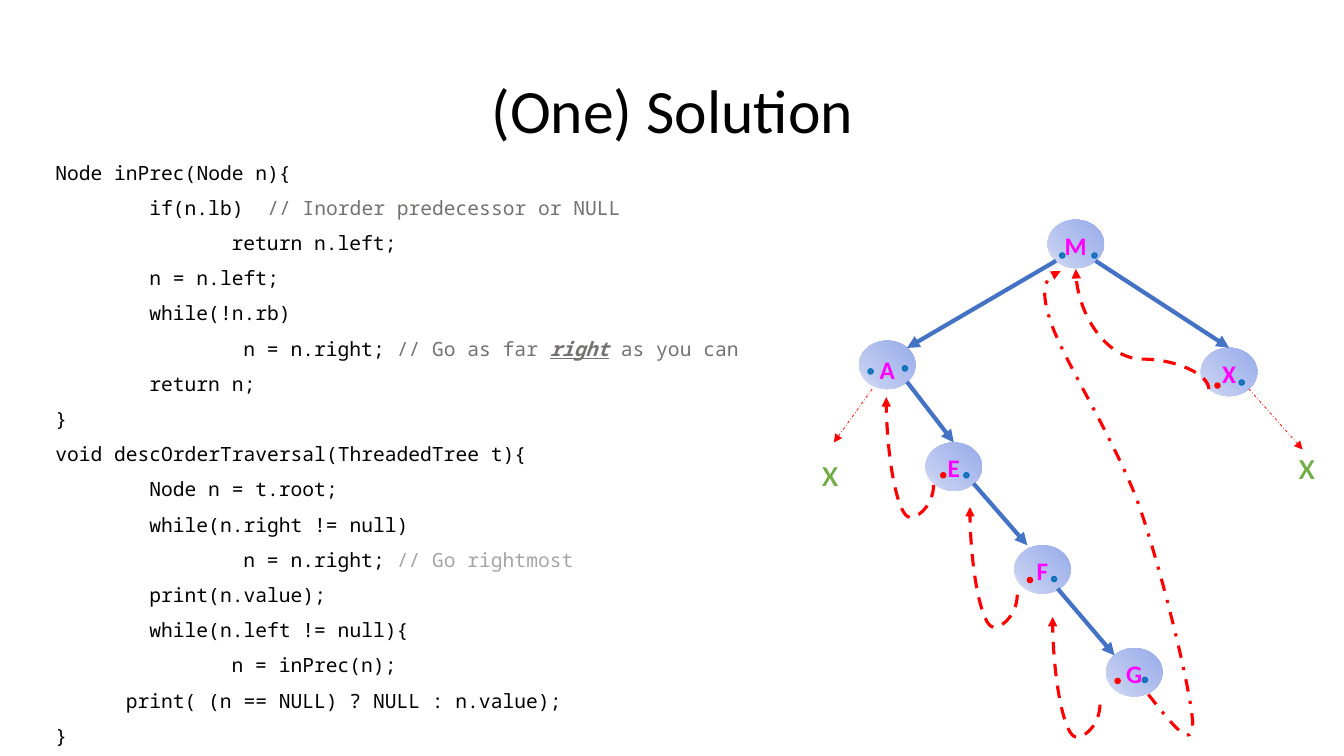
import lxml.etree
import pptx
import pptx.dml.color
import pptx.enum.dml
import pptx.enum.shapes
import pptx.enum.text
import pptx.oxml
import pptx.oxml.ns
import pptx.util

WIDE, TALL = 133.3, 75
SANS, MONO = "Calibri", "Noto Sans Mono"
HUES = {
    "ink": "000000", "note": "767171", "pale": "A6A6A6", "name": "FF00FF",
    "null": "70AD47", "link": "4472C4", "thread": "FF0000",
    "dot": "2E75B6", "rim": "0070C0",
}
SHADES = [(0, "96ABEA"), (74, "C0CBF0"), (100, "E0E5F7")]
DASH = pptx.enum.dml.MSO_LINE.DASH
DOTTED = pptx.enum.dml.MSO_LINE.DASH_DOT
MID = pptx.enum.text.PP_ALIGN.CENTER
LEFT = pptx.enum.text.PP_ALIGN.LEFT

CODE = [
    (0, ["Node inPrec(Node n){"]),
    (8, ["if(n.lb)  ", ("// Inorder predecessor or NULL", "note")]),
    (15, ["return n.left;"]),
    (8, ["n = n.left;"]),
    (8, ["while(!n.rb)"]),
    (16, ["n = n.right; ", ("// Go as far ", "note"),
          ("right", "note", True), (" as you can", "note")]),
    (8, ["return n;"]),
    (0, ["}"]),
    (0, ["void descOrderTraversal(ThreadedTree t){"]),
    (8, ["Node n = t.root;"]),
    (8, ["while(n.right != null)"]),
    (16, ["n = n.right; ", ("// Go rightmost", "pale")]),
    (8, ["print(n.value);"]),
    (8, ["while(n.left != null){"]),
    (15, ["n = inPrec(n);"]),
    (6, ["print( (n == NULL) ? NULL : n.value);"]),
    (0, ["}"]),
]
NODE_W, NODE_H = 5.6, 4.8
NODES = {
    "M": (106.7, 24.2, "dot", (-1.35, 1.15), (1.85, 1.15)),
    "A": (88, 36.2, "dot", (-1.65, 0.65), (1.75, 0.35)),
    "X": (121.9, 36.9, "thread", (-1.15, 1.35), (1.25, 1.05)),
    "E": (94.6, 46.3, "thread", (-1.05, 0.85), (1.25, 0.85)),
    "F": (103.4, 56.5, "thread", (-1.25, 1.05), (1.15, 0.95)),
    "G": (112.5, 66.7, "thread", (-1.65, 0.85), (1.05, 0.75)),
}
SWEEP = [
    (113.9, 68.9), (116.2, 71.8), (118.4, 74.7), (118.3, 71.6),
    (118.1, 68.4), (115.3, 56.9), (113, 50.2), (110.6, 43.6),
    (105.5, 35.8), (104.2, 31.9), (102.9, 28), (104, 27.4), (105.2, 26.9),
]


def grid(*cells):
    return [pptx.util.Inches(cell / 10) for cell in cells]


def tint(hue):
    return pptx.dml.color.RGBColor.from_string(HUES[hue])


def write(shape, lines, size=18, font=SANS, hue="ink", bold=False, align=MID,
          mid=True, wrap=True, inset=(1, 0.5, 1, 0.5), space=1, before=0):
    frame = shape.text_frame
    frame.word_wrap = wrap
    anchor = pptx.enum.text.MSO_ANCHOR
    frame.vertical_anchor = anchor.MIDDLE if mid else anchor.TOP
    (frame.margin_left, frame.margin_top,
     frame.margin_right, frame.margin_bottom) = grid(*inset)
    for row, (indent, parts) in enumerate(lines):
        para = frame.add_paragraph() if row else frame.paragraphs[0]
        para.alignment, para.line_spacing = align, space
        para.space_before = pptx.util.Pt(before)
        if indent:
            step = pptx.util.Pt(indent * size * 0.6)
            para._p.get_or_add_pPr().set("marL", str(step))
        for part in parts:
            words, shade, stress = part, hue, False
            if isinstance(part, tuple):
                words, shade, stress = (part + (False,))[:3]
            run = para.add_run()
            run.text = words
            face = run.font
            face.name, face.size = font, pptx.util.Pt(size)
            face.bold, face.italic, face.underline = bold or stress, stress, stress
            face.color.rgb = tint(shade)


def box(slide, place, lines, **style):
    write(slide.shapes.add_textbox(*grid(*place)), lines, **style)


def oval(slide, x, y, w, h):
    kind = pptx.enum.shapes.MSO_SHAPE.OVAL
    shape = slide.shapes.add_shape(kind, *grid(x - w / 2, y - h / 2, w, h))
    shape.shadow.inherit = False
    return shape


def node(slide, name):
    x, y = NODES[name][:2]
    shape = oval(slide, x, y, NODE_W, NODE_H)
    stops = "".join(f'<a:gs pos="{pos * 1000}"><a:srgbClr val="{hue}"/></a:gs>'
                    for pos, hue in SHADES)
    shape.element.spPr.insert(2, pptx.oxml.parse_xml(
        f'<a:gradFill {pptx.oxml.ns.nsdecls("a")}><a:gsLst>{stops}</a:gsLst>'
        '<a:path path="circle"><a:fillToRect l="100000" b="100000"/></a:path>'
        '</a:gradFill>'))
    shape.line.fill.background()
    drop = 1 if name == "A" else 0.2
    write(shape, [(0, [name])], hue="name", bold=True, wrap=False,
          inset=(0, drop, 0, 0))
    return shape


def dot(slide, x, y, hue):
    shape = oval(slide, x, y, 0.5, 0.5)
    shape.fill.solid()
    shape.fill.fore_color.rgb = tint(hue)
    shape.line.color.rgb = tint("rim" if hue == "dot" else hue)
    shape.line.width = pptx.util.Pt(1)


def under(parent, tag, **values):
    return lxml.etree.SubElement(parent, pptx.oxml.ns.qn(tag), **values)


def pen(shape, hue, width, dash=None):
    shape.line.color.rgb = tint(hue)
    shape.line.width = pptx.util.Pt(width)
    if dash:
        shape.line.dash_style = dash
    props = shape.element.spPr
    under(props.find(pptx.oxml.ns.qn("a:ln")), "a:tailEnd", type="triangle")
    under(props, "a:effectLst")


def arrow(slide, start, end, hue="link", width=3, dash=None):
    kind = pptx.enum.shapes.MSO_CONNECTOR.STRAIGHT
    line = slide.shapes.add_connector(kind, *grid(*start, *end))
    pen(line, hue, width, dash)
    return line


def thread(slide, start, end, bend):
    (x, y), (far, top) = start, end
    mx, my = (x + far) / 2, (y + top) / 2
    long, high = (y - top) / 2, (x - far) / 2
    kind = pptx.enum.shapes.MSO_CONNECTOR.CURVE
    line = slide.shapes.add_connector(
        kind, *grid(mx + long, my - high, mx - long, my + high))
    props = line.element.spPr
    props.find(pptx.oxml.ns.qn("a:xfrm")).set("rot", "5400000")
    shape = props.find(pptx.oxml.ns.qn("a:prstGeom"))
    guides = shape.find(pptx.oxml.ns.qn("a:avLst"))
    if guides is None:
        guides = under(shape, "a:avLst")
    under(guides, "a:gd", name="adj1", fmla=f"val {round(bend * 100000)}")
    pen(line, "thread", 2.25, DASH)


def curve(points, steps=12):
    for i in range(0, len(points) - 1, 3):
        for step in range(1, steps + 1):
            t = step / steps
            parts = ((1 - t) ** 3, 3 * t * (1 - t) ** 2, 3 * t * t * (1 - t), t ** 3)
            yield grid(*(sum(part * point[axis] for part, point
                             in zip(parts, points[i:i + 4])) for axis in (0, 1)))


def sweep(slide):
    form = slide.shapes.build_freeform(*grid(*SWEEP[0]))
    form.add_line_segments(list(curve(SWEEP)), close=False)
    shape = form.convert_to_shape()
    shape.fill.background()
    pen(shape, "thread", 2.25, DOTTED)


def edge(name, side, level):
    x, y = NODES[name][:2]
    return x + side * NODE_W * 0.35, y + level * NODE_H * 0.35


def main():
    deck = pptx.Presentation()
    deck.slide_width, deck.slide_height = grid(WIDE, TALL)
    slide = deck.slides.add_slide(deck.slide_layouts[6])

    box(slide, (9.2, 4, 115, 14.5), [(0, ["(One) Solution"])], size=44, space=0.9)
    box(slide, (4.5, 15.7, 124.7, 58.1), CODE, size=14, font=MONO,
        align=LEFT, mid=False, space=0.9, before=10)

    nodes = {name: node(slide, name) for name in NODES}
    arrow(slide, edge("M", -1, 1), edge("A", 1, -1))
    for start, name in ((edge("M", 1, 1), "X"), (edge("A", 1, 1), "E")):
        arrow(slide, start, NODES[name][:2]).end_connect(nodes[name], 0)
    arrow(slide, edge("E", 1, 1), (101.9, 54.1))
    arrow(slide, (104.9, 58.4), edge("G", -1, -1))

    for x, y in ((92.6, 48.1), (100.9, 59), (109.1, 69.9)):
        thread(slide, (x, y), (x - 4.7, y - 8.7), -0.37)
    thread(slide, (119.9, 38.6), (106.7, 26.7), 0.25)
    sweep(slide)

    for x, y in ((80.5, 43.9), (127.8, 43.2)):
        box(slide, (x, y, 4.3, 5.7), [(0, ["x"])], size=28, hue="null",
            align=LEFT, mid=False)
    for x, y, hue, left, right in NODES.values():
        dot(slide, x + left[0], y + left[1], hue)
        dot(slide, x + right[0], y + right[1], "dot")
    for start, end in ((edge("X", 1, 1), (129.2, 44.6)),
                       ((86.5, 38.6), (82.7, 43.9))):
        arrow(slide, start, end, "thread", 0.5, DOTTED)
    deck.save("out.pptx")


if __name__ == "__main__":
    main()
